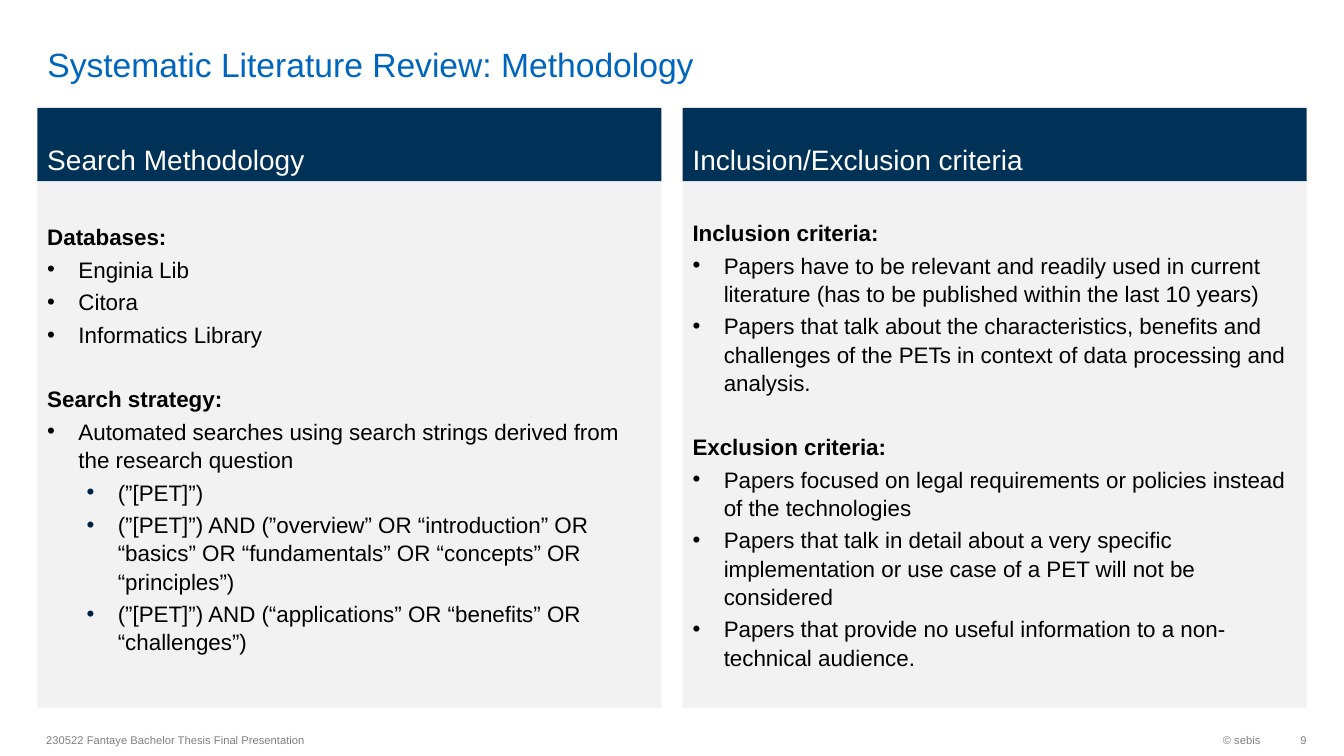
from dataclasses import dataclass

from lxml.etree import SubElement
from pptx import Presentation
from pptx.dml.color import RGBColor
from pptx.enum.shapes import MSO_SHAPE
from pptx.enum.text import MSO_ANCHOR, MSO_AUTO_SIZE, PP_ALIGN
from pptx.oxml.ns import qn
from pptx.util import Inches, Pt

NAVY = RGBColor(0x00, 0x32, 0x58)
BULLET_NAVY = RGBColor(0x00, 0x21, 0x43)
BLUE = RGBColor(0x00, 0x65, 0xBD)
LIGHT = RGBColor(0xF2, 0xF2, 0xF2)
GRAY = RGBColor(0x80, 0x80, 0x80)
BLACK = RGBColor(0x00, 0x00, 0x00)
WHITE = RGBColor(0xFF, 0xFF, 0xFF)

FONT = "Arial"
LEFT, TOP, WIDTH, GAP = 0.37, 1.07, 6.19, 0.21
HEADER_HEIGHT, BODY_HEIGHT = 0.73, 5.22
LINE_SPACING = 1.05
BODY_SPACE, SECTION_SPACE = 3.2, 25.7
HANGING = 0.31
INDENTS = (0.31, 0.7)


@dataclass
class Item:
    text: str
    level: int = 0


@dataclass
class Section:
    heading: str
    items: list[Item]


@dataclass
class Panel:
    title: str
    top_inset: float
    sections: list[Section]


@dataclass
class Footer:
    text: str
    left: float
    width: float
    align: PP_ALIGN
    right_inset: float = 0.1


PANELS = [
    Panel("Search Methodology", 0.4, [
        Section("Databases:", [
            Item("Enginia Lib"),
            Item("Citora"),
            Item("Informatics Library"),
        ]),
        Section("Search strategy:", [
            Item("Automated searches using search strings derived from the research question"),
            Item("(”[PET]”)", 1),
            Item("(”[PET]”) AND (”overview” OR “introduction” OR “basics” OR "
                 "“fundamentals” OR “concepts” OR “principles”)", 1),
            Item("(”[PET]”) AND (“applications” OR “benefits” OR “challenges”)", 1),
        ]),
    ]),
    Panel("Inclusion/Exclusion criteria", 0.36, [
        Section("Inclusion criteria:", [
            Item("Papers have to be relevant and readily used in current literature "
                 "(has to be published within the last 10 years)"),
            Item("Papers that talk about the characteristics, benefits and challenges "
                 "of the PETs in context of data processing and analysis."),
        ]),
        Section("Exclusion criteria:", [
            Item("Papers focused on legal requirements or policies instead of the technologies"),
            Item("Papers that talk in detail about a very specific implementation "
                 "or use case of a PET will not be considered"),
            Item("Papers that provide no useful information to a non-technical audience."),
        ]),
    ]),
]

FOOTERS = [
    Footer("230522 Fantaye Bachelor Thesis Final Presentation", 0.36, 6.3, PP_ALIGN.LEFT),
    Footer("© sebis", 10.26, 2.34, PP_ALIGN.RIGHT),
    Footer("9", 12.6, 0.36, PP_ALIGN.RIGHT, 0),
]


def add_run(p, text: str, size: float, color: RGBColor, bold: bool = False) -> None:
    r = p.add_run()
    r.text = text
    r.font.name = FONT
    r.font.size = Pt(size)
    r.font.bold = bold
    r.font.color.rgb = color


def add_bullet(p, level: int) -> None:
    p.level = level
    pPr = p._p.get_or_add_pPr()
    pPr.set("marL", str(Inches(INDENTS[level])))
    pPr.set("indent", str(-Inches(HANGING)))
    color = SubElement(pPr, qn("a:buClr"))
    SubElement(color, qn("a:srgbClr")).set("val", str(BULLET_NAVY if level else BLACK))
    SubElement(pPr, qn("a:buFont")).set("typeface", FONT)
    SubElement(pPr, qn("a:buChar")).set("char", "•")


def add_block(s, left: float, top: float, height: float, fill: RGBColor, anchor: MSO_ANCHOR):
    shape = s.shapes.add_shape(MSO_SHAPE.RECTANGLE, Inches(left), Inches(top),
                               Inches(WIDTH), Inches(height))
    shape.shadow.inherit = False
    shape.fill.solid()
    shape.fill.fore_color.rgb = fill
    shape.line.fill.background()
    tf = shape.text_frame
    tf.word_wrap = True
    tf.vertical_anchor = anchor
    return tf


def add_paragraph(tf, first: bool, space: float):
    p = tf.paragraphs[0] if first else tf.add_paragraph()
    p.alignment = PP_ALIGN.LEFT
    p.line_spacing = LINE_SPACING
    if not first:
        p.space_before = Pt(space)
    return p


def add_panel(s, panel: Panel, left: float) -> None:
    header = add_block(s, left, TOP, HEADER_HEIGHT, NAVY, MSO_ANCHOR.BOTTOM)
    add_run(add_paragraph(header, True, 0), panel.title, 20, WHITE)
    body = add_block(s, left, TOP + HEADER_HEIGHT, BODY_HEIGHT, LIGHT, MSO_ANCHOR.TOP)
    body.margin_top = Inches(panel.top_inset)
    for i, section in enumerate(panel.sections):
        p = add_paragraph(body, i == 0, SECTION_SPACE)
        add_run(p, section.heading, 16, BLACK, True)
        for item in section.items:
            p = add_paragraph(body, False, BODY_SPACE)
            add_bullet(p, item.level)
            add_run(p, item.text, 16, BLACK)


def add_title(s, text: str) -> None:
    title = s.shapes.title
    title.left, title.top = Inches(LEFT), Inches(0.05)
    title.width, title.height = Inches(11.58), Inches(0.79)
    tf = title.text_frame
    tf.auto_size = MSO_AUTO_SIZE.NONE
    tf.word_wrap = True
    tf.vertical_anchor = MSO_ANCHOR.BOTTOM
    tf.margin_top = tf.margin_bottom = 0
    p = tf.paragraphs[0]
    p.alignment = PP_ALIGN.LEFT
    add_run(p, text, 24, BLUE)


def add_footer(s, footer: Footer) -> None:
    box = s.shapes.add_textbox(Inches(footer.left), Inches(7.19),
                               Inches(footer.width), Inches(0.31))
    tf = box.text_frame
    tf.word_wrap = True
    tf.vertical_anchor = MSO_ANCHOR.MIDDLE
    tf.margin_right = Inches(footer.right_inset)
    p = tf.paragraphs[0]
    p.alignment = footer.align
    add_run(p, footer.text, 8, GRAY)


def main() -> None:
    prs = Presentation()
    prs.slide_width, prs.slide_height = Inches(13.33), Inches(7.5)
    s = prs.slides.add_slide(prs.slide_layouts[5])
    add_title(s, "Systematic Literature Review: Methodology")
    for i, panel in enumerate(PANELS):
        add_panel(s, panel, LEFT + i * (WIDTH + GAP))
    for footer in FOOTERS:
        add_footer(s, footer)
    prs.save("out.pptx")


if __name__ == "__main__":
    main()
